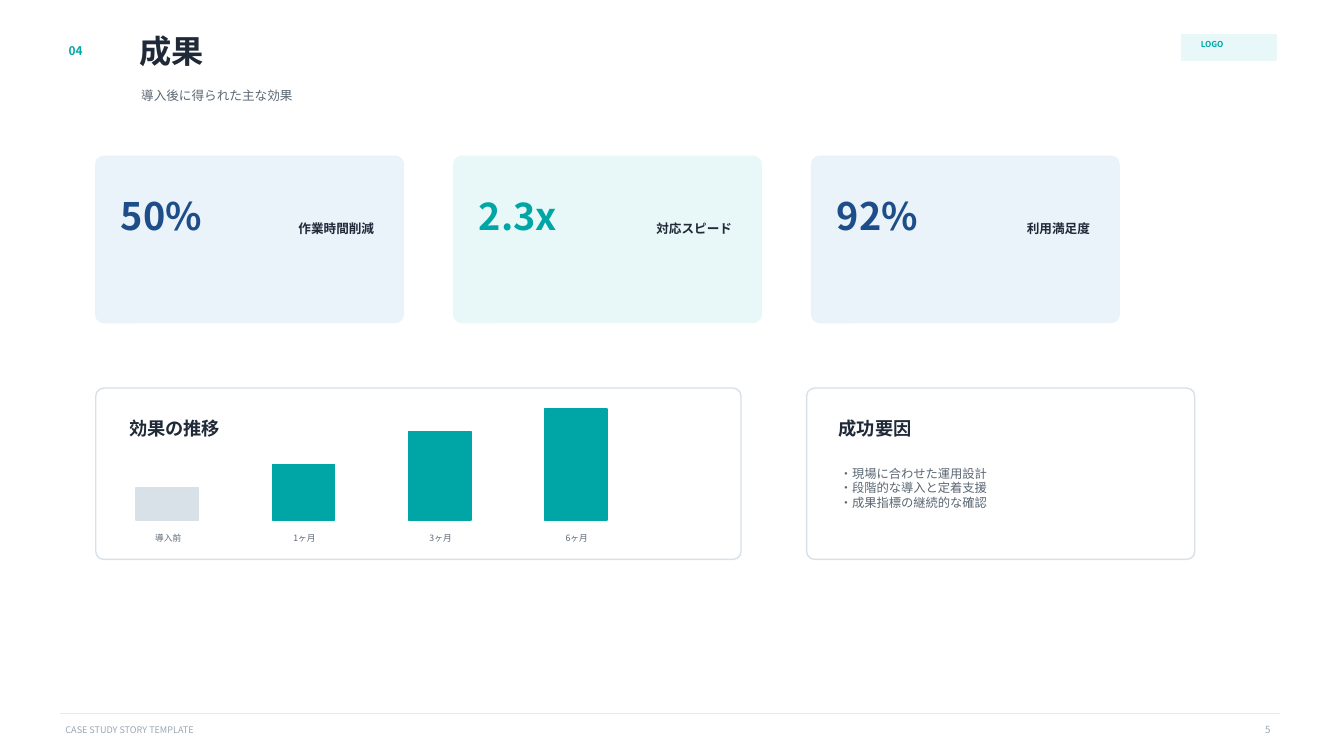
from pptx import Presentation
from pptx.dml.color import RGBColor
from pptx.enum.shapes import MSO_CONNECTOR, MSO_SHAPE
from pptx.enum.text import MSO_ANCHOR, PP_ALIGN
from pptx.oxml.ns import qn
from pptx.util import Inches, Pt
from lxml.etree import SubElement

# Content
NUMBER, TITLE, SUBTITLE = "04", "成果", "導入後に得られた主な効果"
LOGO = "LOGO"
FOOTER, PAGE = "CASE STUDY STORY TEMPLATE", "5"
METRICS = [  # value, label, fill, value colour
    ("50%", "作業時間削減", "pale_blue", "blue"),
    ("2.3x", "対応スピード", "pale_teal", "teal"),
    ("92%", "利用満足度", "pale_blue", "blue"),
]
TREND_TITLE = "効果の推移"
TREND = [  # period, bar height, colour
    ("導入前", 0.32, "border"),
    ("1ヶ月", 0.55, "teal"),
    ("3ヶ月", 0.88, "teal"),
    ("6ヶ月", 1.1, "teal"),
]
FACTORS_TITLE = "成功要因"
FACTORS = ["・現場に合わせた運用設計", "・段階的な導入と定着支援", "・成果指標の継続的な確認"]

THEME = {
    "font": "Noto Sans CJK JP",
    "color": {
        "ink": "1F2937", "body": "5B6773", "muted": "9AA6B2", "rule": "E5EAF0",
        "border": "D8E0E8", "teal": "00A6A6", "blue": "1D4E89",
        "pale_teal": "E8F7F7", "pale_blue": "EAF2FA", "white": "FFFFFF",
    },
    "size": {
        "title": 23, "value": 27, "heading": 13, "text": 9, "list": 8.8,
        "number": 8.5, "page": 7, "footer": 6.5, "axis": 6.2, "logo": 5.8,
    },
}


def rgb(name):
    return RGBColor.from_string(THEME["color"][name])


def add_text(s, box, lines, size, color, bold=False, align=PP_ALIGN.LEFT):
    tf = s.shapes.add_textbox(*map(Inches, box)).text_frame
    tf.word_wrap = True
    tf.vertical_anchor = MSO_ANCHOR.MIDDLE
    tf.margin_left = tf.margin_right = tf.margin_top = tf.margin_bottom = 0
    tf.text = "\n".join(lines)
    for p in tf.paragraphs:
        p.alignment = align
        p.font.size = Pt(THEME["size"][size])
        p.font.bold = bold
        p.font.color.rgb = rgb(color)
        p.font.name = THEME["font"]
        # Japanese glyphs take the East Asian typeface
        SubElement(p._p.pPr.find(qn("a:defRPr")), qn("a:ea"), typeface=THEME["font"])
    return tf


def add_box(s, box, fill, line=None, radius=None):
    kind = MSO_SHAPE.ROUNDED_RECTANGLE if radius else MSO_SHAPE.RECTANGLE
    sp = s.shapes.add_shape(kind, *map(Inches, box))
    if radius:
        sp.adjustments[0] = radius / min(box[2:])
    sp.shadow.inherit = False
    sp.fill.solid()
    sp.fill.fore_color.rgb = rgb(fill)
    sp.line.color.rgb = rgb(line or fill)
    sp.line.width = Pt(1)


def add_header(s):
    add_text(s, (0.68, 0.36, 0.32, 0.28), [NUMBER], "number", "teal", True)
    add_text(s, (1.38, 0.28, 7.45, 0.45), [TITLE], "title", "ink", True)
    add_text(s, (1.4, 0.8, 7.45, 0.3), [SUBTITLE], "text", "body")
    add_box(s, (11.72, 0.34, 0.94, 0.26), "pale_teal")
    add_text(s, (11.91, 0.38, 0.58, 0.12), [LOGO], "logo", "teal", True)


def add_metrics(s):
    left, top, pitch = 0.95, 1.55, 3.55
    for i, (value, label, fill, color) in enumerate(METRICS):
        x = left + i * pitch
        add_box(s, (x, top, 3.05, 1.65), fill, radius=0.08)
        add_text(s, (x + 0.25, top + 0.38, 1.55, 0.42), [value], "value", color, True)
        add_text(s, (x + 1.9, top + 0.61, 0.86, 0.22), [label], "text", "ink", True,
                 PP_ALIGN.RIGHT)


def add_panel(s, left, width, title, title_left):
    add_box(s, (left, 3.85, width, 1.7), "white", "border", 0.08)
    add_text(s, (title_left, 4.12, 1.5, 0.25), [title], "heading", "ink", True)


def add_trend(s):
    add_panel(s, 0.95, 6.4, TREND_TITLE, 1.28)
    left, pitch, bar_w, base = 1.35, 1.35, 0.62, 5.16
    for i, (period, height, color) in enumerate(TREND):
        x = left + i * pitch
        add_box(s, (x, base - height, bar_w, height), color)
        add_text(s, (x - 0.13, base + 0.1, 0.9, 0.15), [period], "axis", "body",
                 align=PP_ALIGN.CENTER)


def add_factors(s):
    add_panel(s, 8, 3.85, FACTORS_TITLE, 8.32)
    add_text(s, (8.33, 4.55, 2.8, 0.58), FACTORS, "list", "body")


def add_footer(s):
    rule = s.shapes.add_connector(MSO_CONNECTOR.STRAIGHT, Inches(0.6), Inches(7.08),
                                  Inches(12.7), Inches(7.08))
    rule.line.color.rgb = rgb("rule")
    rule.line.width = Pt(0.8)
    SubElement(rule._element.spPr, qn("a:effectLst"))
    add_text(s, (0.65, 7.16, 4, 0.16), [FOOTER], "footer", "muted")
    tf = add_text(s, (12.45, 7.13, 0.87, 0.33), [PAGE], "page", "muted")
    tf.vertical_anchor = MSO_ANCHOR.TOP
    tf.margin_left = tf.margin_right = Inches(0.1)
    tf.margin_top = tf.margin_bottom = Inches(0.05)


def main():
    prs = Presentation()
    prs.slide_width, prs.slide_height = Inches(13.33), Inches(7.5)
    s = prs.slides.add_slide(prs.slide_layouts[6])
    s.background.fill.solid()
    s.background.fill.fore_color.rgb = rgb("white")
    for add_part in (add_header, add_metrics, add_trend, add_factors, add_footer):
        add_part(s)
    prs.save("out.pptx")


if __name__ == "__main__":
    main()
